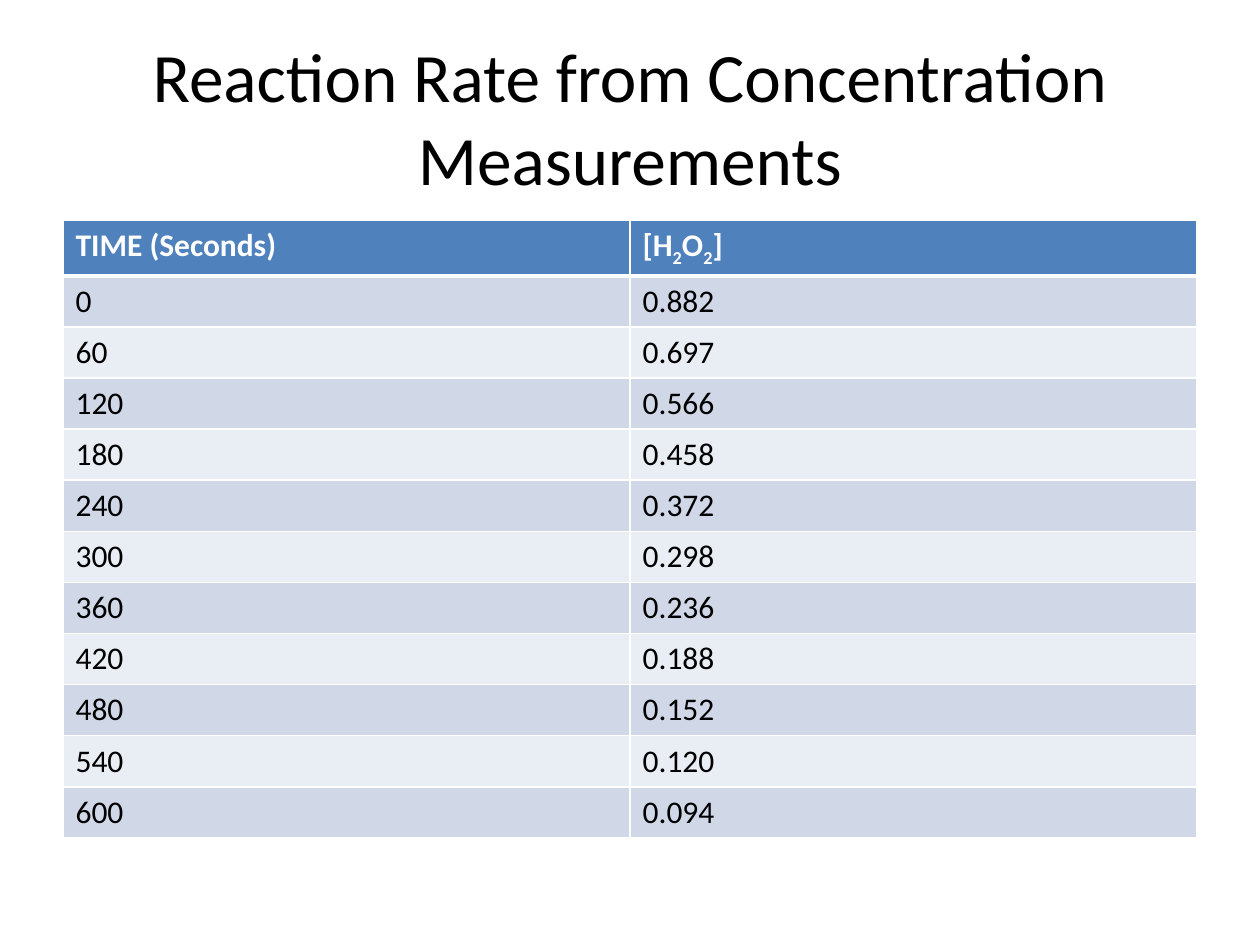
import pptx
import pptx.dml.color
import pptx.enum.text
import pptx.oxml
import pptx.oxml.ns
import pptx.util
from pptx.util import Inches

COLORS = {
    "text": "000000",
    "header": "4F81BD",
    "header_text": "FFFFFF",
    "odd_row": "D0D8E8",
    "even_row": "E9EDF4",
    "border": "FFFFFF",
}
FONT = "Calibri"
TITLE = "Reaction Rate from Concentration Measurements"
TIME_HEADING = "TIME (Seconds)"
PEROXIDE_PARTS = ["[H", "2", "O", "2", "]"]
TIME_STEP = 60
CONCENTRATIONS = [
    "0.882", "0.697", "0.566", "0.458", "0.372", "0.298",
    "0.236", "0.188", "0.152", "0.120", "0.094",
]


def rgb(name):
    """Return the named colour."""
    return pptx.dml.color.RGBColor.from_string(COLORS[name])


def format_runs(paragraph, size, color, bold=False):
    """Give every run of a paragraph the same font."""
    for run in paragraph.runs:
        run.font.name = FONT
        run.font.size = pptx.util.Pt(size)
        run.font.bold = bold
        run.font.color.rgb = rgb(color)


def set_borders(cell, bottom=1, top=1):
    """Draw the four borders of a cell, with widths in points."""
    properties = cell._tc.get_or_add_tcPr()
    sides = [("lnL", 1), ("lnR", 1), ("lnT", top), ("lnB", bottom)]
    for index, (side, width) in enumerate(sides):
        line = pptx.oxml.parse_xml(
            f'<a:{side} {pptx.oxml.ns.nsdecls("a")} w="{pptx.util.Pt(width)}">'
            f'<a:solidFill><a:srgbClr val="{COLORS["border"]}"/></a:solidFill>'
            f'</a:{side}>'
        )
        properties.insert(index, line)


def add_title(slide, left, top, width, height):
    """Place the centred slide title in the given box."""
    title = slide.shapes.title
    title.left, title.top, title.width, title.height = left, top, width, height
    text_frame = title.text_frame
    text_frame.text = TITLE
    text_frame.word_wrap = True
    text_frame.vertical_anchor = pptx.enum.text.MSO_ANCHOR.MIDDLE
    paragraph = text_frame.paragraphs[0]
    paragraph.alignment = pptx.enum.text.PP_ALIGN.CENTER
    format_runs(paragraph, 39.6, "text")


def write_peroxide_heading(paragraph):
    """Write the formula heading with its digits as subscripts."""
    for part in PEROXIDE_PARTS:
        run = paragraph.add_run()
        run.text = part
        if part.isdigit():
            run.font._element.set("baseline", "-25000")


def add_concentration_table(slide, left, top, width, height):
    """Fill the given box with the table of concentrations over time."""
    rows = [(TIME_HEADING, "")] + [
        (str(index * TIME_STEP), value)
        for index, value in enumerate(CONCENTRATIONS)
    ]
    table = slide.shapes.add_table(len(rows), 2, left, top, width, height).table
    write_peroxide_heading(table.cell(0, 1).text_frame.paragraphs[0])
    for row_index, row in enumerate(rows):
        is_header = row_index == 0
        band = "odd_row" if row_index % 2 else "even_row"
        for column_index, value in enumerate(row):
            cell = table.cell(row_index, column_index)
            if value:
                cell.text_frame.text = value
            cell.fill.solid()
            cell.fill.fore_color.rgb = rgb("header" if is_header else band)
            set_borders(cell, bottom=3 if is_header else 1,
                        top=3 if row_index == 1 else 1)
            format_runs(cell.text_frame.paragraphs[0], 18,
                        "header_text" if is_header else "text", is_header)


def main():
    """Build and save the slide."""
    presentation = pptx.Presentation()
    presentation.slide_width = Inches(10)
    presentation.slide_height = Inches(7.5)
    slide = presentation.slides.add_slide(presentation.slide_layouts[5])
    add_title(slide, Inches(0.5), Inches(0.3), Inches(9), Inches(1.25))
    add_concentration_table(slide, Inches(0.5), Inches(1.75), Inches(9), Inches(4.87))
    presentation.save("out.pptx")


if __name__ == "__main__":
    main()
